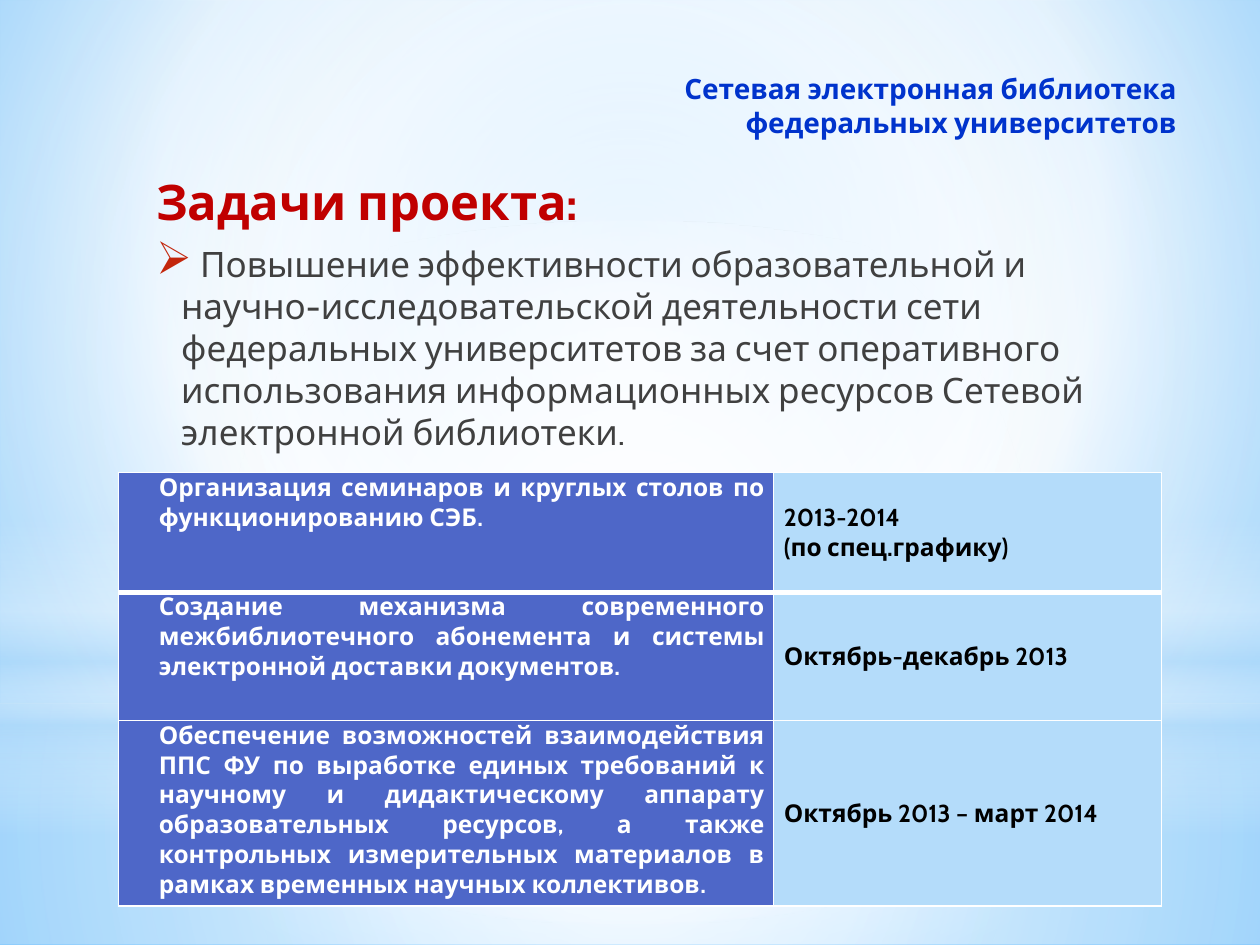
import pptx
import pptx.util
import pptx.oxml
import pptx.oxml.ns
from pptx.dml.color import RGBColor
from pptx.enum.shapes import MSO_SHAPE
from pptx.enum.text import MSO_ANCHOR, PP_ALIGN
from pptx.util import Pt

FONT = "Cabin"
WHITE = RGBColor(0xFF, 0xFF, 0xFF)
BLACK = RGBColor(0x00, 0x00, 0x00)
PALE = RGBColor(0xB4, 0xDC, 0xFA)
SKY = RGBColor(0x9E, 0xD5, 0xFF)
AZURE = RGBColor(0x5B, 0xB9, 0xFF)
INDIGO = RGBColor(0x4E, 0x67, 0xC8)
TITLE_BLUE = RGBColor(0x00, 0x33, 0xCC)
HEADING_RED = RGBColor(0xC0, 0x00, 0x00)
BULLET_RED = RGBColor(0xC3, 0x26, 0x0C)
GREY = RGBColor(0x40, 0x40, 0x40)

CENTRE = (50, 50, 50, 50)
NS = pptx.oxml.ns.nsdecls("a")

TASKS = [
    ("Организация семинаров и круглых столов по функционированию СЭБ.",
     "2013-2014 \v(по спец.графику)"),
    ("Создание механизма современного межбиблиотечного абонемента и системы "
     "электронной доставки документов.",
     "Октябрь-декабрь 2013"),
    ("Обеспечение возможностей взаимодействия ППС ФУ по выработке единых "
     "требований к научному и дидактическому аппарату образовательных ресурсов, "
     "а также контрольных измерительных материалов в рамках временных научных "
     "коллективов.",
     "Октябрь 2013 – март 2014"),
]


def set_gradient(owner, stops, focus=None):
    """Fill with (position, colour, opacity) stops: circular with a focus, else vertical."""
    owner.fill.solid()
    gs = "".join(
        f'<a:gs pos="{pos * 1000}"><a:srgbClr val="{color}">'
        f'<a:alpha val="{opacity * 1000}"/></a:srgbClr></a:gs>'
        for pos, color, opacity in stops)
    if focus:
        l, t, r, b = (v * 1000 for v in focus)
        shade = (f'<a:path path="circle"><a:fillToRect l="{l}" t="{t}" '
                 f'r="{r}" b="{b}"/></a:path>')
    else:
        shade = '<a:lin ang="5400000" scaled="0"/>'
    grad = pptx.oxml.parse_xml(
        f'<a:gradFill {NS} rotWithShape="1"><a:gsLst>{gs}</a:gsLst>{shade}</a:gradFill>')
    return grad


def replace_fill(element, grad):
    solid = element.find(".//" + pptx.oxml.ns.qn("a:solidFill"))
    solid.getparent().replace(solid, grad)


def add_glow(slide, kind, box, stops, focus=None):
    sp = slide.shapes.add_shape(kind, *map(Pt, box))
    sp.shadow.inherit = False
    replace_fill(sp.element, set_gradient(sp, stops, focus))
    sp.line.fill.background()


def add_backdrop(slide, width, height):
    grad = set_gradient(slide.background,
                        [(0, SKY, 100), (60, WHITE, 100), (100, AZURE, 100)],
                        (20, 10, 20, 60))
    replace_fill(slide.element, grad)
    horizon = 402
    rect = MSO_SHAPE.RECTANGLE
    add_glow(slide, rect, (0, horizon, width, height - horizon),
             [(0, WHITE, 91), (37, WHITE, 76), (100, PALE, 79)], CENTRE)
    add_glow(slide, rect, (0, 0, width, horizon),
             [(0, WHITE, 89), (48, WHITE, 62), (100, PALE, 79)], CENTRE)
    add_glow(slide, rect, (0, 297, width, 180),
             [(0, WHITE, 0), (29, WHITE, 30), (45, PALE, 40),
              (55, WHITE, 26), (65, PALE, 60), (100, WHITE, 0)])
    add_glow(slide, MSO_SHAPE.OVAL, (0, 126, width, horizon),
             [(0, WHITE, 100), (56, WHITE, 0)], CENTRE)


def style_paragraph(p, size, color, bold=True, left=0, first=0):
    f = p.font
    f.name, f.size, f.bold = FONT, Pt(size), bold
    f.color.rgb = color
    pPr = p._p.get_or_add_pPr()
    pPr.set("marL", str(Pt(left)))
    pPr.set("indent", str(Pt(first)))


def add_text_frame(slide, box):
    tf = slide.shapes.add_textbox(*map(Pt, box)).text_frame
    tf.word_wrap = True
    return tf


def add_title(slide, box):
    p = add_text_frame(slide, box).paragraphs[0]
    p.text = "Сетевая электронная библиотека\vфедеральных университетов"
    p.alignment = PP_ALIGN.RIGHT
    style_paragraph(p, 16, TITLE_BLUE)


def add_bullet(p, char, color, percent):
    pPr = p._p.get_or_add_pPr()
    parts = (f'<a:buClr {NS}><a:srgbClr val="{color}"/></a:buClr>',
             f'<a:buSzPct {NS} val="{percent * 1000}"/>',
             f'<a:buChar {NS} char="{char}"/>')
    font = pPr.find(pptx.oxml.ns.qn("a:defRPr"))
    for xml in parts:
        font.addprevious(pptx.oxml.parse_xml(xml))


def add_body(slide, box):
    tf = add_text_frame(slide, box)
    p = tf.paragraphs[0]
    p.text = "Задачи проекта:"
    p.space_after = Pt(3)
    style_paragraph(p, 28, HEADING_RED, left=3.6)

    p = tf.add_paragraph()
    p.text = (" Повышение эффективности образовательной и научно-исследовательской "
              "деятельности сети федеральных университетов за счет оперативного "
              "использования информационных ресурсов Сетевой электронной библиотеки.")
    p.space_before, p.space_after = Pt(4), Pt(3)
    style_paragraph(p, 20, GREY, bold=False, left=18, first=-14.4)
    add_bullet(p, "➢", BULLET_RED, 130)


def set_borders(cell, top, bottom):
    tcPr = cell._tc.get_or_add_tcPr()
    for side, width in (("L", 1), ("R", 1), ("T", top), ("B", bottom)):
        tcPr.append(pptx.oxml.parse_xml(
            f'<a:ln{side} {NS} w="{Pt(width)}"><a:solidFill>'
            f'<a:srgbClr val="{WHITE}"/></a:solidFill></a:ln{side}>'))


def add_schedule(slide, box, col_widths, row_heights):
    table = slide.shapes.add_table(len(row_heights), len(col_widths),
                                   *map(Pt, box)).table
    table.first_row = table.horz_banding = False
    for col, width in zip(table.columns, col_widths):
        col.width = Pt(width)
    styles = [(INDIGO, WHITE, 18, PP_ALIGN.JUSTIFY, MSO_ANCHOR.TOP),
              (PALE, BLACK, 0.7, PP_ALIGN.LEFT, MSO_ANCHOR.MIDDLE)]
    for i, (texts, height) in enumerate(zip(TASKS, row_heights)):
        table.rows[i].height = Pt(height)
        for j, (fill, color, indent, align, anchor) in enumerate(styles):
            cell = table.cell(i, j)
            set_borders(cell, top=3 if i == 1 else 1, bottom=3 if i == 0 else 1)
            cell.fill.solid()
            cell.fill.fore_color.rgb = fill
            cell.margin_left = cell.margin_right = Pt(5.2)
            cell.margin_top = cell.margin_bottom = 0
            cell.vertical_anchor = anchor
            p = cell.text_frame.paragraphs[0]
            p.text = texts[j]
            p.alignment = align
            style_paragraph(p, 14, color, left=indent)


def main():
    prs = pptx.Presentation()
    prs.slide_width, prs.slide_height = Pt(720), Pt(540)
    slide = prs.slides.add_slide(prs.slide_layouts[6])
    add_backdrop(slide, 720, 540)
    add_title(slide, (167, 37.5, 512.6, 51))
    add_body(slide, (78.5, 94.3, 573.8, 380))
    add_schedule(slide, (67.6, 270, 596.2, 247.7),
                 (374.4, 221.8), (68.4, 73.4, 105.9))
    prs.save("out.pptx")


if __name__ == "__main__":
    main()
